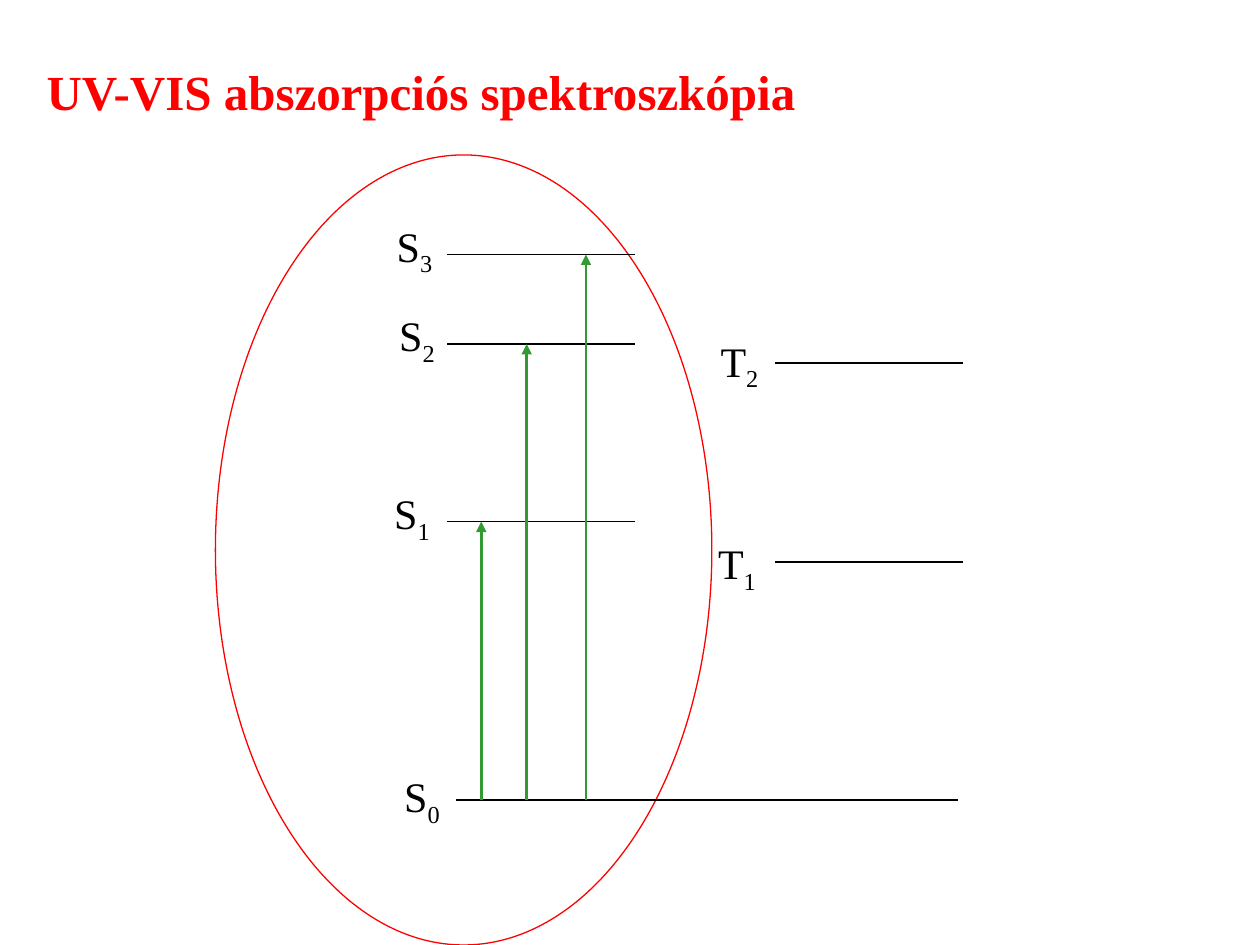
from collections import namedtuple

from lxml import etree
from pptx import Presentation
from pptx import util as u
from pptx.dml.color import RGBColor
from pptx.enum import shapes, text
from pptx.oxml.ns import qn

FONT = "Times New Roman"
RED, BLACK, GREEN = "FF0000", "000000", "339933"
SINGLET_X, TRIPLET_X, LEVEL_WIDTH = 1.84, 4.44, 1.49

Box = namedtuple("Box", "left top width height")
Level = namedtuple("Level", "letter index left height width label_left label_top")

# Inches, measured from the top left corner of the diagram
LEVELS = [
    Level("S", "0", 1.91, 5.12, 3.98, 1.40, 4.84),
    Level("S", "1", SINGLET_X, 2.91, LEVEL_WIDTH, 1.32, 2.59),
    Level("S", "2", SINGLET_X, 1.50, LEVEL_WIDTH, 1.36, 1.18),
    Level("S", "3", SINGLET_X, 0.79, LEVEL_WIDTH, 1.34, 0.47),
    Level("T", "1", TRIPLET_X, 3.23, LEVEL_WIDTH, 3.89, 2.99),
    Level("T", "2", TRIPLET_X, 1.65, LEVEL_WIDTH, 3.91, 1.38),
]
EXCITATIONS = {"S1": 2.11, "S2": 2.47, "S3": 2.94}


def color(value):
    return RGBColor.from_string(value)


def inches(*values):
    return [u.Inches(value) for value in values]


def set_all(target, formats):
    for name, value in formats.items():
        setattr(target, name, value)


def add_span(para, words, size, tint, bold=False):
    span = para.add_run()
    span.text = words
    set_all(span.font, {"name": FONT, "size": u.Pt(size), "bold": bold})
    span.font.color.rgb = color(tint)
    return span


def format_frame(frame):
    set_all(frame, {"word_wrap": True, "vertical_anchor": text.MSO_ANCHOR.TOP,
                    "auto_size": text.MSO_AUTO_SIZE.SHAPE_TO_FIT_TEXT})
    frame.paragraphs[0].alignment = text.PP_ALIGN.LEFT
    return frame.paragraphs[0]


def add_line(page, start, end, tint, weight, arrow=False):
    line = page.shapes.add_connector(
        shapes.MSO_CONNECTOR.STRAIGHT, *inches(*start, *end))
    line.line.color.rgb = color(tint)
    line.line.width = u.Pt(weight)
    if arrow:
        etree.SubElement(line.line._get_or_add_ln(), qn("a:tailEnd"), type="triangle")
    etree.SubElement(line._element.spPr, qn("a:effectLst"))


def add_title(page, box):
    title = page.shapes.title
    set_all(title, dict(zip(box._fields, inches(*box))))
    para = format_frame(title.text_frame)
    add_span(para, "UV-VIS abszorpciós spektroszkópia", 28, RED, bold=True)


def add_singlet_outline(page, box):
    outline = page.shapes.add_shape(shapes.MSO_SHAPE.OVAL, *inches(*box))
    outline.shadow.inherit = False
    outline.fill.background()
    outline.line.color.rgb = color(RED)
    outline.line.width = u.Pt(0.75)


def add_level(page, box, level):
    """Draw one energy level and its subscripted label."""
    left, height = box.left + level.left, box.top + level.height
    add_line(page, (left, height), (left + level.width, height), BLACK, 0.75)
    label = page.shapes.add_textbox(*inches(
        box.left + level.label_left, box.top + level.label_top, 0.55, 0.5))
    para = format_frame(label.text_frame)
    add_span(para, level.letter, 24, BLACK)
    index = add_span(para, level.index, 24, BLACK)
    index.font._element.set("baseline", "-25000")


def add_energy_diagram(page, box):
    add_singlet_outline(page, box)
    for level in LEVELS:
        add_level(page, box, level)
    heights = {level.letter + level.index: box.top + level.height for level in LEVELS}
    for target, offset in EXCITATIONS.items():
        across = box.left + offset
        add_line(page, (across, heights["S0"]), (across, heights[target]),
                 GREEN, 1.5, arrow=True)


def main():
    deck = Presentation()
    deck.slide_width, deck.slide_height = inches(10, 7.5)
    page = deck.slides.add_slide(deck.slide_layouts.get_by_name("Title Only"))
    add_title(page, Box(0.27, 0.44, 6.46, 0.57))
    add_energy_diagram(page, Box(1.71, 1.23, 3.94, 6.27))
    deck.save("out.pptx")


if __name__ == "__main__":
    main()
